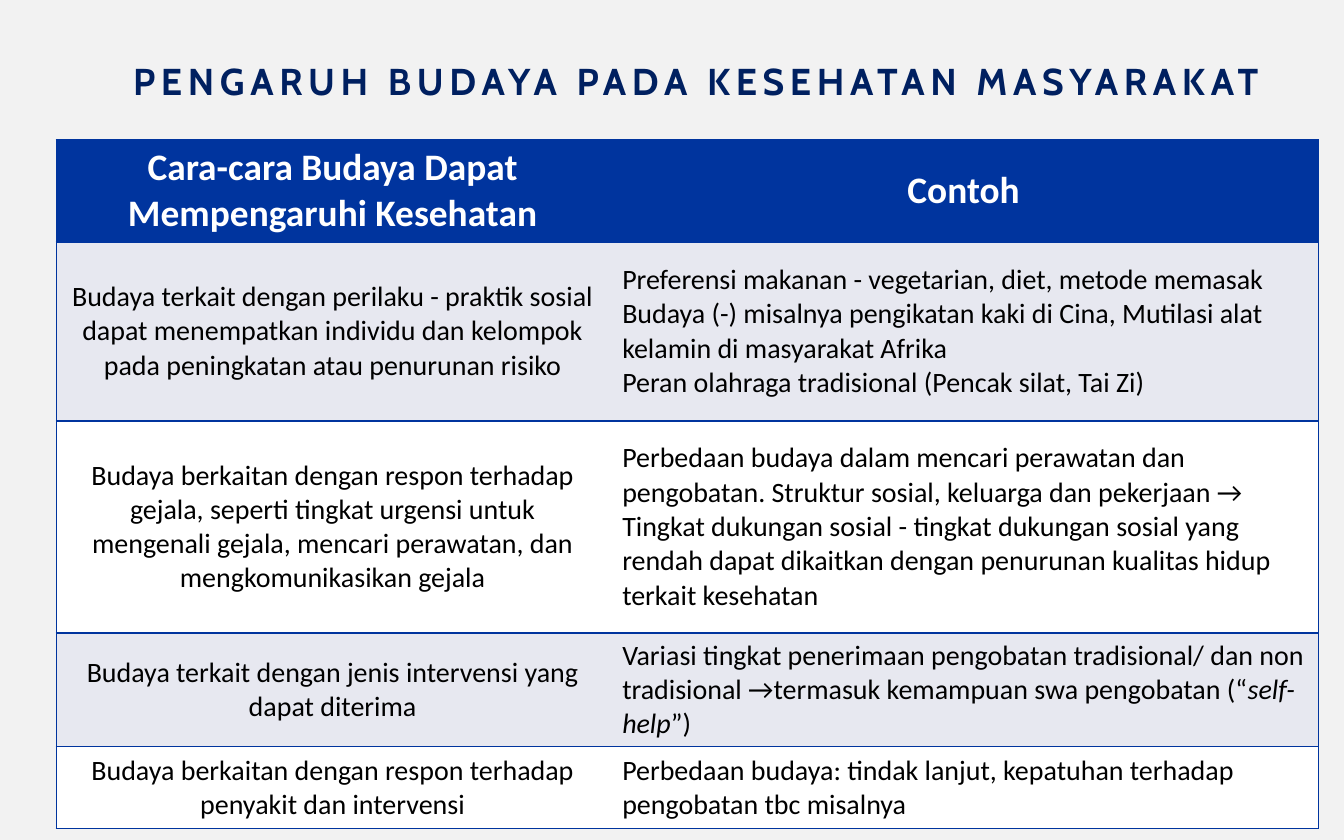
from lxml import etree
from pptx import Presentation, util as u
from pptx.dml.color import RGBColor
from pptx.enum import text
from pptx.oxml import ns

# Content: each cell is a list of paragraphs; *asterisks* mark italics
TITLE = "PENGARUH BUDAYA PADA KESEHATAN MASYARAKAT"
ROWS = [
    (["Cara-cara Budaya Dapat Mempengaruhi Kesehatan"], ["Contoh"]),
    (["Budaya terkait dengan perilaku - praktik sosial dapat menempatkan "
      "individu dan kelompok pada peningkatan atau penurunan risiko"],
     ["Preferensi makanan - vegetarian, diet, metode memasak",
      "Budaya (-) misalnya pengikatan kaki di Cina, Mutilasi alat kelamin "
      "di masyarakat Afrika",
      "Peran olahraga tradisional (Pencak silat, Tai Zi)"]),
    (["Budaya berkaitan dengan respon terhadap gejala, seperti tingkat urgensi "
      "untuk mengenali gejala, mencari perawatan, dan mengkomunikasikan gejala"],
     ["Perbedaan budaya dalam mencari perawatan dan pengobatan. Struktur sosial, "
      "keluarga dan pekerjaan → Tingkat dukungan sosial - tingkat dukungan "
      "sosial yang rendah dapat dikaitkan dengan penurunan kualitas hidup "
      "terkait kesehatan"]),
    (["Budaya terkait dengan jenis intervensi yang dapat diterima"],
     ["Variasi tingkat penerimaan pengobatan tradisional/ dan non tradisional "
      "→termasuk kemampuan swa pengobatan (“*self-help*”)"]),
    (["Budaya berkaitan dengan respon terhadap penyakit dan intervensi"],
     ["Perbedaan budaya: tindak lanjut, kepatuhan terhadap pengobatan tbc "
      "misalnya"]),
]
COLUMN_WIDTHS = [4.11, 5.28]
ROW_HEIGHTS = [0.75, 1.33, 1.58, 0.83, 0.61]
BLUE, NAVY, WHITE, BAND, PAPER = "00349E", "002060", "FFFFFF", "E7E8F0", "F2F2F2"


def color(value):
    return RGBColor.from_string(value)


def write(frame, paragraphs, *, size, ink, font="Calibri", bold=False,
          align=text.PP_ALIGN.LEFT, spacing=None):
    for index, content in enumerate(paragraphs):
        para = frame.paragraphs[0] if index == 0 else frame.add_paragraph()
        para.alignment = align
        for part, words in enumerate(content.split("*")):
            span = para.add_run()
            span.text = words
            span.font.name, span.font.size = font, u.Pt(size)
            span.font.bold, span.font.italic = bold, part % 2 == 1
            span.font.color.rgb = color(ink)
            if spacing:
                span.font._element.set("spc", str(spacing * 100))


def set_borders(cell, visible):
    properties = cell._tc.get_or_add_tcPr()
    for side in "LRTB":
        line = etree.SubElement(properties, ns.qn(f"a:ln{side}"), w=str(u.Pt(1)))
        if side in visible:
            fill = etree.SubElement(line, ns.qn("a:solidFill"))
            etree.SubElement(fill, ns.qn("a:srgbClr"), val=BLUE)
        else:
            etree.SubElement(line, ns.qn("a:noFill"))


# Page
deck = Presentation()
deck.slide_width, deck.slide_height = u.Inches(10), u.Inches(6.25)
page = deck.slides.add_slide(deck.slide_layouts[5])
page.background.fill.solid()
page.background.fill.fore_color.rgb = color(PAPER)

# Title
title = page.shapes.title
title.left, title.top = u.Inches(0.5), u.Inches(0.38)
title.width, title.height = u.Inches(9.36), u.Inches(0.44)
title.text_frame.word_wrap = False
title.text_frame.auto_size = text.MSO_AUTO_SIZE.NONE
write(title.text_frame, [TITLE], size=20, ink=NAVY, font="Cabin", bold=True,
      align=text.PP_ALIGN.CENTER, spacing=3)

# Table
table = page.shapes.add_table(
    len(ROWS), len(COLUMN_WIDTHS), u.Inches(0.42), u.Inches(1.04),
    u.Inches(sum(COLUMN_WIDTHS)), u.Inches(sum(ROW_HEIGHTS))).table
table.horz_banding = False
for column, width in zip(table.columns, COLUMN_WIDTHS):
    column.width = u.Inches(width)
for row, height in zip(table.rows, ROW_HEIGHTS):
    row.height = u.Inches(height)

for r, contents in enumerate(ROWS):
    header = r == 0
    for c, paragraphs in enumerate(contents):
        cell = table.cell(r, c)
        set_borders(cell, "LTB" if c == 0 else "RTB")
        cell.fill.solid()
        cell.fill.fore_color.rgb = color(BLUE if header else BAND if r % 2 else WHITE)
        cell.vertical_anchor = text.MSO_ANCHOR.MIDDLE
        cell.margin_left = cell.margin_right = u.Inches(0.1)
        cell.margin_top = cell.margin_bottom = u.Inches(0.04)
        centred = header or c == 0
        write(cell.text_frame, paragraphs, size=20 if header else 15,
              ink=WHITE if header else "000000", bold=header,
              align=text.PP_ALIGN.CENTER if centred else text.PP_ALIGN.LEFT)

deck.save("out.pptx")
